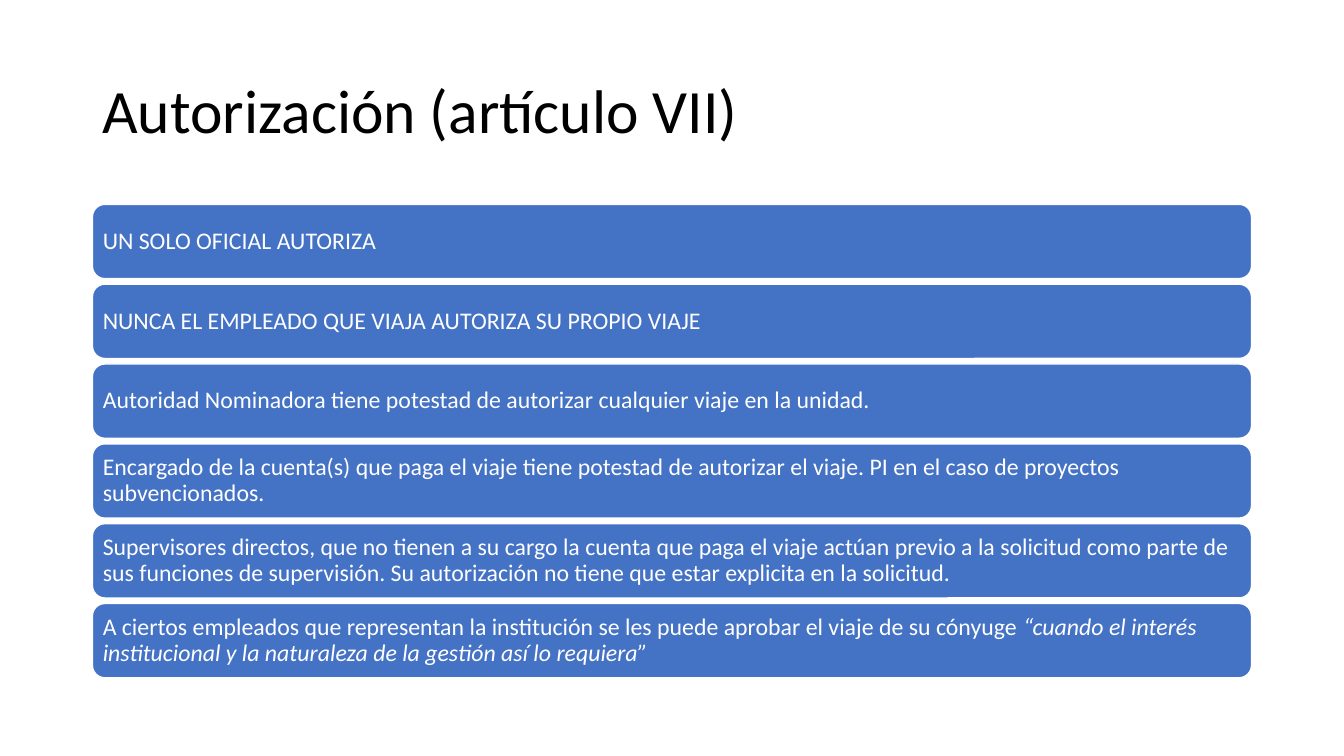
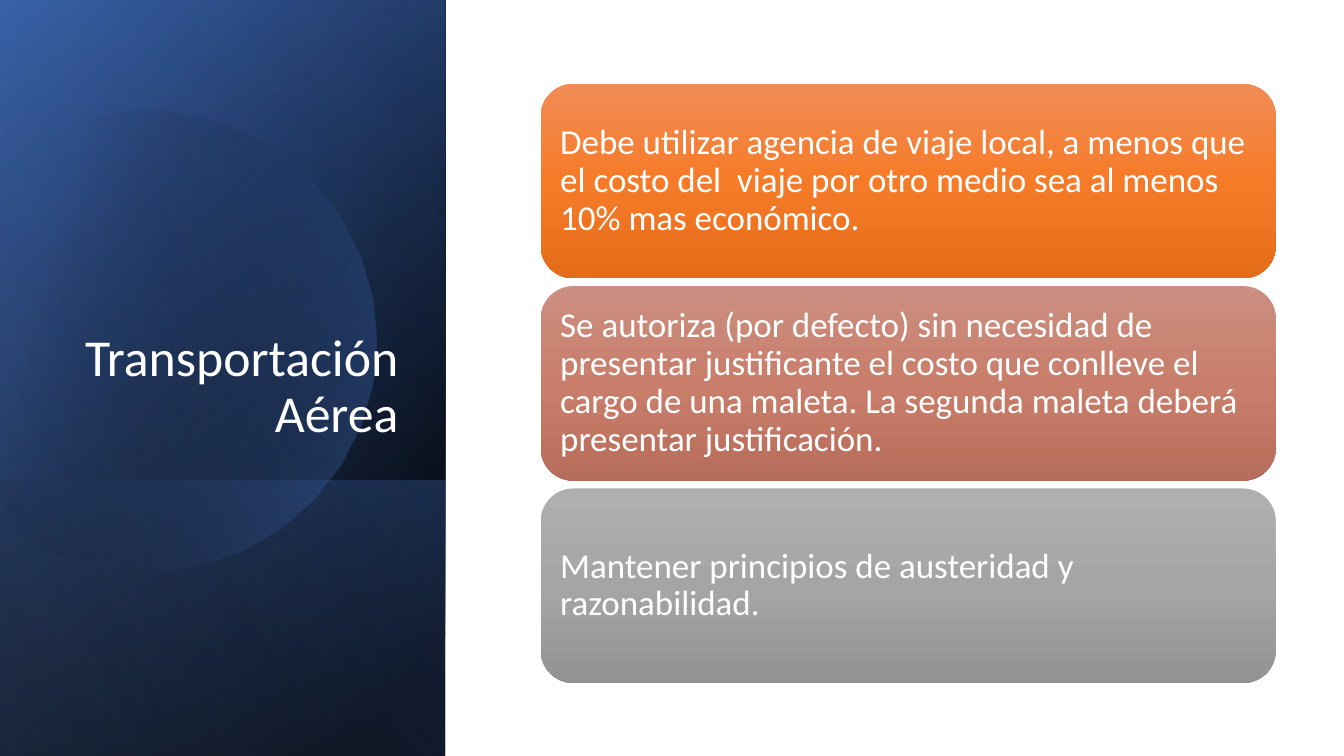
import math

from lxml import etree
from pptx import Presentation
from pptx.dml.color import RGBColor
from pptx.enum.shapes import MSO_SHAPE
from pptx.enum.text import MSO_ANCHOR, MSO_AUTO_SIZE, PP_ALIGN
from pptx.oxml.ns import qn
from pptx.util import Cm, Pt

RECTANGLE = MSO_SHAPE.RECTANGLE
ROUNDED = MSO_SHAPE.ROUNDED_RECTANGLE
MIDDLE, BOTTOM = MSO_ANCHOR.MIDDLE, MSO_ANCHOR.BOTTOM
LEFT, RIGHT = PP_ALIGN.LEFT, PP_ALIGN.RIGHT
NO_AUTOFIT = MSO_AUTO_SIZE.NONE

FONT = "Calibri"
WHITE = RGBColor(0xFF, 0xFF, 0xFF)
BLACK = RGBColor(0x00, 0x00, 0x00)
BLUE = RGBColor(0x44, 0x72, 0xC4)
DARK_BLUE = RGBColor(0x2F, 0x55, 0x97)
LIGHT_BLUE = RGBColor(0x8F, 0xAA, 0xDC)
ORANGES = (RGBColor(0xF1, 0x8C, 0x57), RGBColor(0xF6, 0x7B, 0x28), RGBColor(0xE5, 0x6C, 0x19))
TERRACOTTAS = (RGBColor(0xCB, 0x8F, 0x81), RGBColor(0xC9, 0x7E, 0x6B), RGBColor(0xB7, 0x6D, 0x5B))
GRAYS = (RGBColor(0xAF, 0xAF, 0xAF), RGBColor(0xA5, 0xA5, 0xA5), RGBColor(0x93, 0x93, 0x93))

SLIDE_WIDTH, SLIDE_HEIGHT = 33.87, 19.05

RULES = [
    [("UN SOLO OFICIAL AUTORIZA", False)],
    [("NUNCA EL EMPLEADO QUE VIAJA AUTORIZA SU PROPIO VIAJE", False)],
    [("Autoridad Nominadora tiene potestad de autorizar cualquier viaje en la unidad.", False)],
    [("Encargado de la cuenta(s) que paga el viaje tiene potestad de autorizar el viaje. "
      "PI en el caso de proyectos subvencionados.", False)],
    [("Supervisores directos, que no tienen a su cargo la cuenta que paga el viaje actúan previo "
      "a la solicitud como parte de sus funciones de supervisión. Su autorización no tiene que "
      "estar explicita en la solicitud.", False)],
    [("A ciertos empleados que representan la institución se les puede aprobar el viaje de su "
      "cónyuge ", False),
     ("“cuando el interés institucional y la naturaleza de la gestión así lo requiera”", True)],
]

AIR_TRAVEL = [
    (ORANGES, [("Debe utilizar agencia de viaje local, a menos que el costo del  viaje por otro "
                "medio sea al menos 10% mas económico.", False)]),
    (TERRACOTTAS, [("Se autoriza (por defecto) sin necesidad de presentar justificante el costo "
                    "que conlleve el cargo de una maleta. La segunda maleta deberá presentar "
                    "justificación.", False)]),
    (GRAYS, [("Mantener principios de austeridad y razonabilidad.", False)]),
]


def write_text(shape, runs, size, color=WHITE, align=LEFT, anchor=MIDDLE, inset=0.25):
    frame = shape.text_frame
    frame.word_wrap = True
    frame.auto_size = NO_AUTOFIT
    frame.vertical_anchor = anchor
    frame.margin_left = frame.margin_right = Cm(inset)
    frame.margin_top = frame.margin_bottom = Cm(0.13)
    paragraph = frame.paragraphs[0]
    paragraph.alignment = align
    paragraph.line_spacing = 0.9
    for text, italic in runs:
        run = paragraph.add_run()
        run.text = text
        run.font.name = FONT
        run.font.size = Pt(size)
        run.font.italic = italic
        run.font.color.rgb = color


def fill_gradient(shape, stops, angle):
    shape.fill.gradient()
    gradient = shape._element.spPr.find(qn("a:gradFill"))
    for child in list(gradient):
        gradient.remove(child)
    gradient.set("rotWithShape", "1")
    stop_list = etree.SubElement(gradient, qn("a:gsLst"))
    for position, color, opacity in stops:
        stop = etree.SubElement(stop_list, qn("a:gs"), pos=str(position * 1000))
        tint = etree.SubElement(stop, qn("a:srgbClr"), val=str(color))
        if opacity < 100:
            etree.SubElement(tint, qn("a:alpha"), val=str(opacity * 1000))
    etree.SubElement(gradient, qn("a:lin"), ang=str(angle * 60000), scaled="0")


def add_box(slide, kind, left, top, width, height):
    shape = slide.shapes.add_shape(kind, Cm(left), Cm(top), Cm(width), Cm(height))
    shape.shadow.inherit = False
    shape.line.fill.background()
    return shape


def add_turned_layer(slide, left, top, width, height, stops, angle):
    turned_left = left + (width - height) / 2
    turned_top = top + (height - width) / 2
    shape = add_box(slide, RECTANGLE, turned_left, turned_top, height, width)
    shape.rotation = 90
    shape._element.spPr.find(qn("a:xfrm")).set("flipH", "1")
    fill_gradient(shape, stops, angle)


def add_cut_disc(slide, edge, center_x, center_y, radius, stops, angle):
    half_sweep = math.acos((edge - center_x) / radius)
    steps = 24
    points = []
    for step in range(steps + 1):
        turn = half_sweep * (2 * step / steps - 1)
        points.append((Cm(center_x + radius * math.cos(turn)),
                       Cm(center_y + radius * math.sin(turn))))
    builder = slide.shapes.build_freeform(*points[0])
    builder.add_line_segments(points[1:], close=True)
    disc = builder.convert_to_shape()
    disc.shadow.inherit = False
    disc.line.fill.background()
    fill_gradient(disc, stops, angle)


def add_side_panel(slide, left, top, width, height):
    panel = (left, top, width, height)
    band_height = 6.94
    band = (left, top + height - band_height, width, band_height)
    add_turned_layer(slide, *panel, [(8, BLACK, 100), (100, DARK_BLUE, 100)], 50)
    add_turned_layer(slide, *panel, [(0, BLACK, 0), (99, BLUE, 46)], 30)
    add_turned_layer(slide, *band, [(2, BLUE, 29), (100, BLACK, 30)], 130)
    add_cut_disc(slide, left, left + 3.67, top + 8.6, 5.82,
                 [(18, BLACK, 0), (100, BLUE, 43)], 14)
    add_turned_layer(slide, *panel, [(0, BLACK, 0), (99, LIGHT_BLUE, 11)], 120)


def place_title(slide, text, left, top, width, height, **text_format):
    title = slide.shapes.title
    title.left, title.top = Cm(left), Cm(top)
    title.width, title.height = Cm(width), Cm(height)
    write_text(title, [(text, False)], **text_format)
    slide.shapes._spTree.append(title._element)


def add_card_stack(slide, items, left, top, width, height, gap, size, inset):
    card_height = (height - gap * (len(items) - 1)) / len(items)
    for index, (colors, runs) in enumerate(items):
        card_top = top + index * (card_height + gap)
        card = add_box(slide, ROUNDED, left, card_top, width, card_height)
        if len(colors) == 1:
            card.fill.solid()
            card.fill.fore_color.rgb = colors[0]
            card.line.color.rgb = WHITE
            card.line.width = Pt(1)
        else:
            stops = [(50 * place, color, 100) for place, color in enumerate(colors)]
            fill_gradient(card, stops, 90)
        write_text(card, runs, size, inset=inset)


def add_title_slide(presentation):
    return presentation.slides.add_slide(presentation.slide_layouts[5])


def build_authorization(presentation):
    slide = add_title_slide(presentation)
    place_title(slide, "Autorización (artículo VII)", 2.33, 1.01, 29.21, 3.68,
                size=44, color=BLACK)
    add_card_stack(slide, [((BLUE,), runs) for runs in RULES],
                   2.33, 5.15, 29.21, 11.93, gap=0.14, size=17, inset=0.17)


def build_air_travel(presentation):
    slide = add_title_slide(presentation)
    add_side_panel(slide, 0, 0, 11.22, SLIDE_HEIGHT)
    place_title(slide, "Transportación Aérea", 1.63, 4.67, 8.66, 6.65,
                size=37, align=RIGHT, anchor=BOTTOM)
    add_card_stack(slide, AIR_TRAVEL, 13.63, 2.11, 18.52, 15.1, gap=0.2, size=25, inset=0.25)


def main():
    presentation = Presentation()
    presentation.slide_width = Cm(SLIDE_WIDTH)
    presentation.slide_height = Cm(SLIDE_HEIGHT)
    build_authorization(presentation)
    build_air_travel(presentation)
    presentation.save("out.pptx")


if __name__ == "__main__":
    main()
